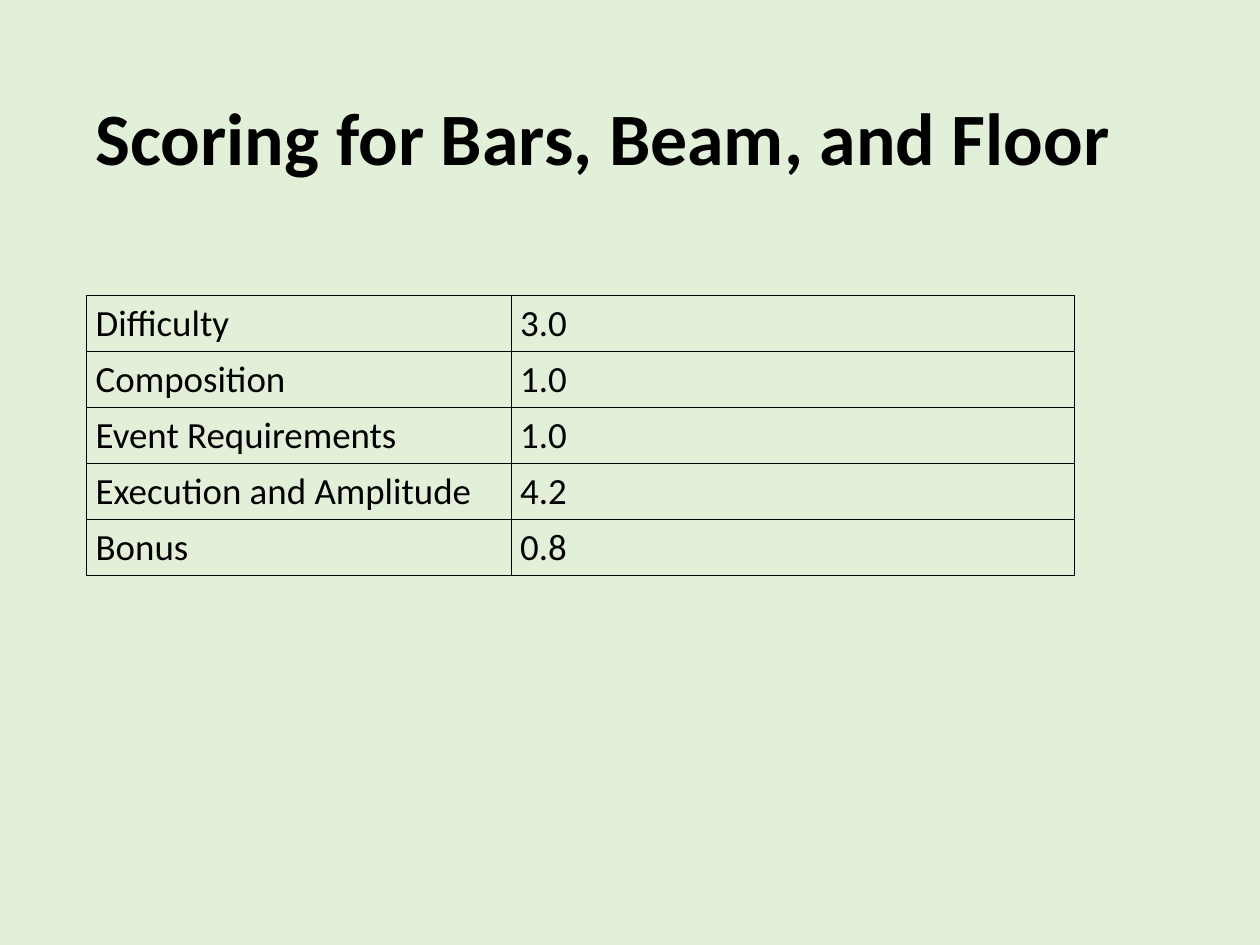
from lxml import etree
from pptx import Presentation
from pptx.dml.color import RGBColor
from pptx.enum.text import MSO_ANCHOR, PP_ALIGN
from pptx.oxml.ns import qn
from pptx.util import Inches, Pt

LEFT = PP_ALIGN.LEFT
MIDDLE = MSO_ANCHOR.MIDDLE
FONT = "Calibri"
COLORS = {"back": "E2F0D9", "ink": "000000"}
SCORES = [
    ("Difficulty", "3.0"),
    ("Composition", "1.0"),
    ("Event Requirements", "1.0"),
    ("Execution and Amplitude", "4.2"),
    ("Bonus", "0.8"),
]


def color(name):
    return RGBColor.from_string(COLORS[name])


def write(frame, text, size, bold=False):
    frame.text = text
    line = frame.paragraphs[0]
    line.alignment = LEFT
    font = line.runs[0].font
    font.name, font.size, font.bold = FONT, Pt(size), bold
    font.color.rgb = color("ink")
    return line


def add_title(slide, text, box):
    frame = slide.shapes.add_textbox(*map(Inches, box)).text_frame
    frame.word_wrap = True
    frame.vertical_anchor = MIDDLE
    write(frame, text, 60, bold=True).line_spacing = 0.9


def add_border(cell):
    """Draw a thin line on all four sides of the cell."""
    props = cell._tc.get_or_add_tcPr()
    for spot, side in enumerate(("lnL", "lnR", "lnT", "lnB")):
        line = etree.Element(qn(f"a:{side}"), w=str(Pt(1)))
        fill = etree.SubElement(line, qn("a:solidFill"))
        etree.SubElement(fill, qn("a:srgbClr"), val=COLORS["ink"])
        props.insert(spot, line)


def add_scores(slide, rows, widths, box):
    shape = slide.shapes.add_table(len(rows), len(widths), *map(Inches, box))
    table = shape.table
    table.first_row = table.horz_banding = False
    for column, width in zip(table.columns, widths):
        column.width = Inches(width)
    for r, row in enumerate(rows):
        for c, text in enumerate(row):
            cell = table.cell(r, c)
            cell.fill.background()
            cell.vertical_anchor = MIDDLE
            write(cell.text_frame, text, 30)
            add_border(cell)


def main():
    deck = Presentation()
    deck.slide_width, deck.slide_height = Inches(14.22), Inches(10.67)
    slide = deck.slides.add_slide(deck.slide_layouts[6])
    back = slide.background.fill
    back.solid()
    back.fore_color.rgb = color("back")
    add_title(slide, "Scoring for Bars, Beam, and Floor", (0.98, 0.57, 12.27, 2.06))
    add_scores(slide, SCORES, (4.79, 6.36), (0.98, 3.34, 11.15, 3.16))
    deck.save("out.pptx")


if __name__ == "__main__":
    main()
